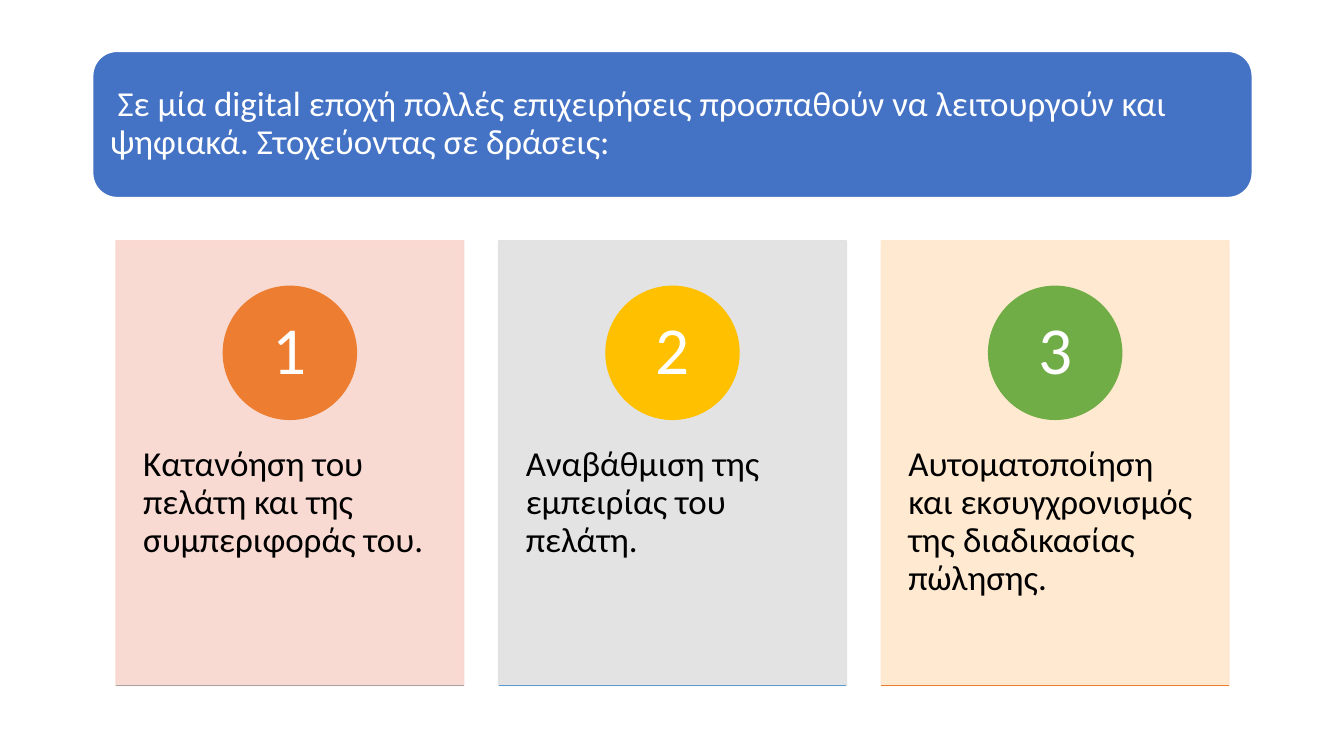
import pptx
import pptx.util
import pptx.dml.color
import pptx.oxml.ns
import lxml.etree
from pptx.enum.shapes import MSO_CONNECTOR, MSO_SHAPE
from pptx.enum.text import MSO_ANCHOR, PP_ALIGN

Inches = pptx.util.Inches
Pt = pptx.util.Pt

HEADER = (" Σε μία digital εποχή πολλές επιχειρήσεις προσπαθούν να "
          "λειτουργούν και ψηφιακά. Στοχεύοντας σε δράσεις:")
# Text, card colour, circle colour, base line colour
CARDS = [
    ("Κατανόηση του πελάτη και της συμπεριφοράς του.",
     "F8D7CE", "ED7D31", "A5A5A5"),
    ("Αναβάθμιση της εμπειρίας του πελάτη.",
     "E1E1E1", "FFC000", "5B9BD5"),
    ("Αυτοματοποίηση και εκσυγχρονισμός της διαδικασίας πώλησης.",
     "FFE8CC", "70AD47", "ED7D31"),
]
CARDS_LEFT, CARDS_RIGHT = 1.15, 12.19
CARD_TOP, CARD_W, CARD_H = 2.39, 3.45, 4.41
CIRCLE_TOP, CIRCLE_D = 2.84, 1.32


def rgb(color):
    return pptx.dml.color.RGBColor.from_string(color)


def set_alpha(color_format_parent, percent):
    """Make every solid colour below an element partly transparent."""
    for clr in color_format_parent.iter(pptx.oxml.ns.qn("a:srgbClr")):
        alpha = lxml.etree.SubElement(clr, pptx.oxml.ns.qn("a:alpha"))
        alpha.set("val", str(percent * 1000))


def add_block(slide, shape_type, box, fill, line=None, alpha=None):
    sp = slide.shapes.add_shape(shape_type, *map(Inches, box))
    sp.shadow.inherit = False
    sp.fill.solid()
    sp.fill.fore_color.rgb = rgb(fill)
    sp.line.color.rgb = rgb(line or fill)
    sp.line.width = Pt(1)
    if alpha:
        set_alpha(sp.element.spPr, alpha)
    return sp


def set_text(sp, text, size, color, insets,
             align=PP_ALIGN.LEFT, anchor=MSO_ANCHOR.MIDDLE):
    tf = sp.text_frame
    tf.word_wrap = True
    tf.vertical_anchor = anchor
    tf.margin_left, tf.margin_top, tf.margin_right, tf.margin_bottom = map(
        Inches, insets)
    p = tf.paragraphs[0]
    p.text = text
    p.alignment = align
    p.line_spacing = 0.9
    p.font.name = "Calibri"
    p.font.size = Pt(size)
    p.font.color.rgb = rgb(color)


def add_base_line(slide, left, y, width, color):
    line = slide.shapes.add_connector(
        MSO_CONNECTOR.STRAIGHT, Inches(left), Inches(y),
        Inches(left + width), Inches(y))
    line.line.color.rgb = rgb(color)
    line.line.width = Pt(1)
    lxml.etree.SubElement(line.element.spPr, pptx.oxml.ns.qn("a:effectLst"))


def add_card(slide, left, number, text, card_color, circle_color, line_color):
    # Panel with its text below the circle
    panel = add_block(slide, MSO_SHAPE.RECTANGLE,
                      (left, CARD_TOP, CARD_W, CARD_H), card_color, alpha=90)
    set_text(panel, text, 25, "000000", (0.27, 2.04, 0.27, 0.36),
             anchor=MSO_ANCHOR.TOP)
    # Numbered circle, centred on the panel
    circle = add_block(slide, MSO_SHAPE.OVAL,
                       (left + (CARD_W - CIRCLE_D) / 2, CIRCLE_TOP,
                        CIRCLE_D, CIRCLE_D), circle_color)
    set_text(circle, str(number), 48, "FFFFFF", (0.1, 0.01, 0.1, 0.01),
             align=PP_ALIGN.CENTER)
    add_base_line(slide, left, CARD_TOP + CARD_H, CARD_W, line_color)


def main():
    prs = pptx.Presentation()
    prs.slide_width, prs.slide_height = Inches(13.33), Inches(7.5)
    slide = prs.slides.add_slide(prs.slide_layouts[6])

    # Cards, evenly spread
    pitch = (CARDS_RIGHT - CARDS_LEFT - CARD_W) / (len(CARDS) - 1)
    for i, card in enumerate(CARDS):
        add_card(slide, CARDS_LEFT + i * pitch, i + 1, *card)

    # Header banner
    header = add_block(slide, MSO_SHAPE.ROUNDED_RECTANGLE,
                       (0.92, 0.51, 11.5, 1.45), "4472C4", line="FFFFFF")
    set_text(header, HEADER, 25, "FFFFFF", (0.1, 0.1, 0.1, 0.1))

    prs.save("out.pptx")


if __name__ == "__main__":
    main()
